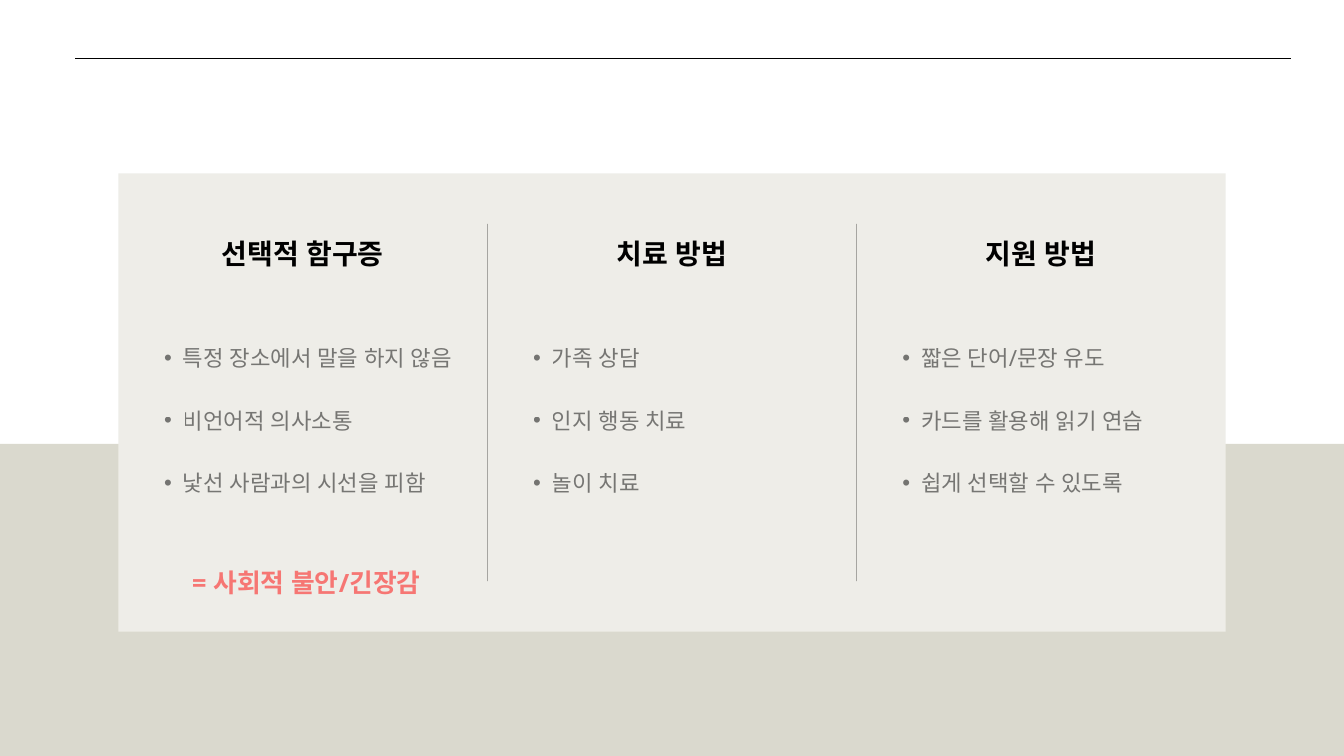
from dataclasses import dataclass

import pptx
import pptx.dml.color
import pptx.enum.shapes
import pptx.enum.text
import pptx.oxml.ns
import pptx.util
from lxml import etree

qn = pptx.oxml.ns.qn
ALIGN = pptx.enum.text.PP_ALIGN


@dataclass(frozen=True)
class Theme:
    font: str = "Noto Sans"
    ink: str = "000000"
    accent: str = "FF0000"
    band: str = "DAD9CE"
    panel: str = "EEEDE8"
    heading_size: float = 30
    bullet_size: float = 23.9
    conclusion_size: float = 27.6
    leading: float = 1.4
    text_alpha: int = 50
    divider_alpha: int = 30
    rule_width: float = 0.75


@dataclass(frozen=True)
class Box:
    left: float
    top: float
    width: float
    height: float

    def share(self, left, top, width, height):
        """Return the box covering the given shares of this one."""
        return Box(self.left + left * self.width, self.top + top * self.height,
                   width * self.width, height * self.height)

    def columns(self, count):
        return [self.share(index / count, 0, 1 / count, 1) for index in range(count)]

    def lengths(self):
        return [pptx.util.Inches(value)
                for value in (self.left, self.top, self.width, self.height)]


THEME = Theme()
SLIDE = Box(0, 0, 20, 11.25)
COLUMNS = [
    ("선택적 함구증",
     ["특정 장소에서 말을 하지 않음", "비언어적 의사소통", "낯선 사람과의 시선을 피함"],
     "= 사회적 불안/긴장감"),
    ("치료 방법", ["가족 상담", "인지 행동 치료", "놀이 치료"], None),
    ("지원 방법",
     ["짧은 단어/문장 유도", "카드를 활용해 읽기 연습", "쉽게 선택할 수 있도록"], None),
]


def rgb(value):
    return pptx.dml.color.RGBColor.from_string(value)


def set_opacity(shape, percent):
    for colour in shape.element.iter(qn("a:srgbClr")):
        etree.SubElement(colour, qn("a:alpha"), val=str(percent * 1000))


def add_bullet(para, margin=0.56, hanging=0.28):
    para.level = 1
    properties = para._p.get_or_add_pPr()
    properties.set("marL", str(pptx.util.Inches(margin)))
    properties.set("indent", str(-pptx.util.Inches(hanging)))
    etree.SubElement(properties, qn("a:buFont"), typeface="Arial")
    etree.SubElement(properties, qn("a:buChar"), char="•")


def add_text(page, box, lines, *, size, colour=THEME.ink, bold=False,
             align=ALIGN.LEFT, bullets=False, gap=0, opacity=100):
    shape = page.shapes.add_textbox(*box.lengths())
    frame = shape.text_frame
    frame.word_wrap = True
    frame.margin_left = frame.margin_right = 0
    frame.margin_top = frame.margin_bottom = 0
    for index, line in enumerate(lines):
        para = frame.paragraphs[0] if index == 0 else frame.add_paragraph()
        para.alignment = align
        para.line_spacing = pptx.util.Pt(round(size * THEME.leading, 1))
        if index:
            para.space_before = pptx.util.Pt(gap)
        if bullets:
            add_bullet(para)
        span = para.add_run()
        span.text = line
        span.font.size = pptx.util.Pt(size)
        span.font.bold = bold
        span.font.name = THEME.font
        span.font.color.rgb = rgb(colour)
        etree.SubElement(span._r.get_or_add_rPr(), qn("a:ea"), typeface=THEME.font)
    if opacity < 100:
        set_opacity(shape, opacity)


def add_block(page, box, colour):
    block = page.shapes.add_shape(
        pptx.enum.shapes.MSO_SHAPE.RECTANGLE, *box.lengths())
    block.shadow.inherit = False
    block.fill.solid()
    block.fill.fore_color.rgb = rgb(colour)
    block.line.fill.background()


def add_rule(page, box, opacity=100):
    """Draw a line from the top left to the bottom right of the box."""
    left, top, width, height = box.lengths()
    rule = page.shapes.add_connector(
        pptx.enum.shapes.MSO_CONNECTOR.STRAIGHT, left, top, left + width, top + height)
    rule.line.width = pptx.util.Pt(THEME.rule_width)
    rule.line.color.rgb = rgb(THEME.ink)
    etree.SubElement(rule.element.spPr, qn("a:effectLst"))
    if opacity < 100:
        set_opacity(rule, opacity)


def add_backdrop(page, box):
    add_block(page, box.share(0, 0.587, 1, 0.413), THEME.band)
    add_rule(page, box.share(0.056, 0.077, 0.9045, 0))


def add_topic(page, box, heading, points, conclusion):
    add_text(page, box.share(0.1, 0.126, 0.8, 0.082), [heading],
             size=THEME.heading_size, bold=True, align=ALIGN.CENTER)
    add_text(page, box.share(0.073, 0.363, 0.927, 0.332), points,
             size=THEME.bullet_size, bullets=True,
             gap=THEME.bullet_size * THEME.leading, opacity=THEME.text_alpha)
    if conclusion:
        add_text(page, box.share(0.087, 0.847, 0.845, 0.075), [conclusion],
                 size=THEME.conclusion_size, colour=THEME.accent, bold=True,
                 align=ALIGN.CENTER, opacity=THEME.text_alpha)


def add_panel(page, box, topics):
    add_block(page, box, THEME.panel)
    columns = box.columns(len(topics))
    for column in columns[1:]:
        add_rule(page, column.share(0, 0.11, 0, 0.78), THEME.divider_alpha)
    for column, topic in zip(columns, topics):
        add_topic(page, column, *topic)


def main():
    deck = pptx.Presentation()
    deck.slide_width = pptx.util.Inches(SLIDE.width)
    deck.slide_height = pptx.util.Inches(SLIDE.height)
    page = deck.slides.add_slide(deck.slide_layouts.get_by_name("Blank"))
    add_backdrop(page, SLIDE)
    add_panel(page, SLIDE.share(0.088, 0.2295, 0.824, 0.606), COLUMNS)
    deck.save("out.pptx")


if __name__ == "__main__":
    main()
